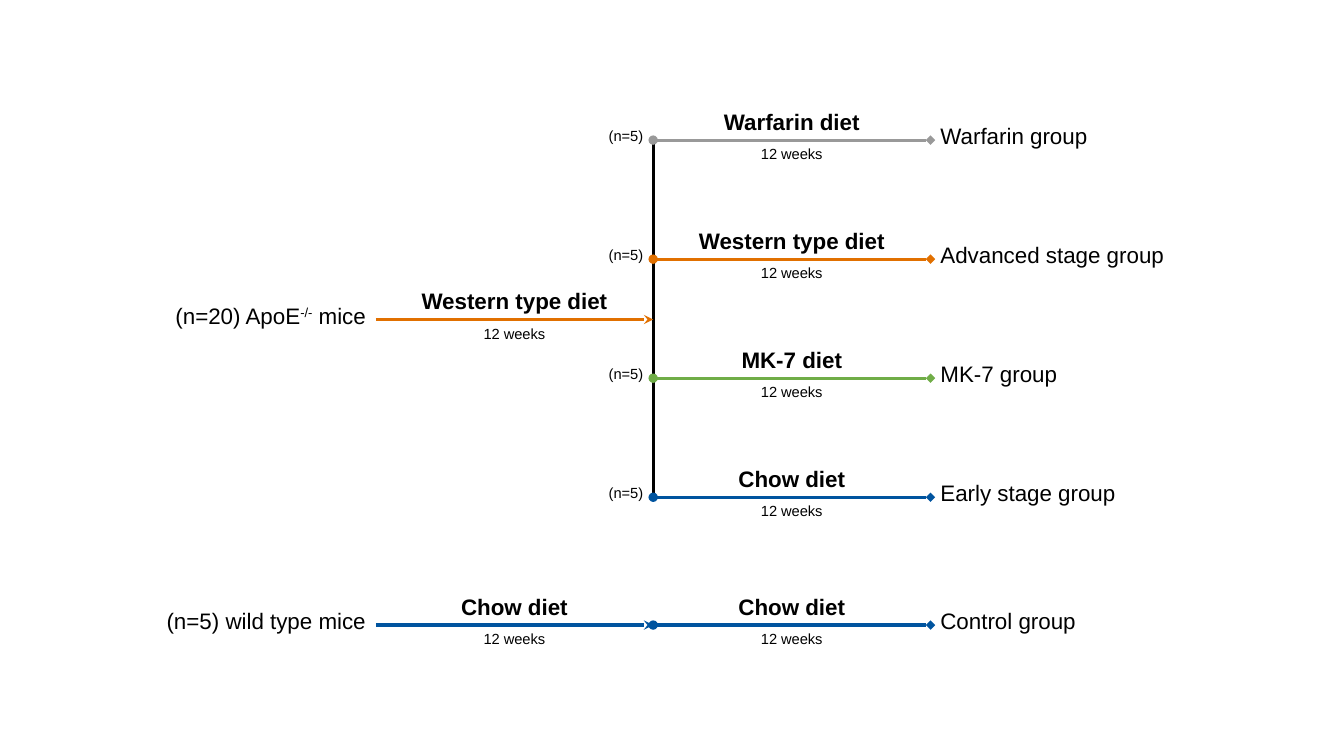
import pptx
import pptx.dml.color
import pptx.enum.shapes
import pptx.enum.text
import pptx.oxml.xmlchemy
import pptx.util
from lxml import etree
from pptx.oxml.ns import qn

Cm = pptx.util.Cm
Pt = pptx.util.Pt
ALIGN = pptx.enum.text.PP_ALIGN
ANCHOR = pptx.enum.text.MSO_ANCHOR

THEME = {
    "font": "Arial",
    "label_size": 16,
    "note_size": 10.5,
    "line_width": 2.25,
    "black": "000000",
    "grey": "999999",
    "orange": "E17000",
    "green": "70AD47",
    "blue": "00549F",
}

DURATION = "12 weeks"
SUBGROUP_SIZE = "(n=5)"
# diet, colour, resulting group
BRANCHES = [
    ("Warfarin diet", "grey", "Warfarin group"),
    ("Western type diet", "orange", "Advanced stage group"),
    ("MK-7 diet", "green", "MK-7 group"),
    ("Chow diet", "blue", "Early stage group"),
]
CONTROL = ("Chow diet", "blue", "Control group")
# mice as (text, superscript) pairs, first diet, colour, height on the slide
COHORTS = [
    ([("(n=20) ApoE", False), ("-/-", True), (" mice", False)],
     "Western type diet", "orange", 8.05),
    ([("(n=5) wild type mice", False)], "Chow diet", "blue", 15.75),
]

# Lengths in centimetres
START_X = 9.47
PERIOD = 6.99
SPLIT_X = START_X + PERIOD
END_X = SPLIT_X + PERIOD
BRANCH_TOP, BRANCH_STEP = 3.53, 3.0
CONTROL_Y = COHORTS[1][3]
LABEL_HEIGHT, NOTE_HEIGHT = 0.94, 0.74
LABEL_RISE, SIZE_RISE = 0.58, 0.47
MICE_WIDTH, GROUP_WIDTH, SIZE_WIDTH = 5.69, 6.32, 3.49

deck = pptx.Presentation()
deck.slide_width, deck.slide_height = Cm(33.87), Cm(19.05)
page = deck.slides.add_slide(deck.slide_layouts[6])


def add_text(text, left, top, width, height, size="label_size", bold=False,
             align=ALIGN.LEFT, anchor=ANCHOR.TOP):
    """Add a text box; text is a string or a list of (text, superscript) pairs."""
    box = page.shapes.add_textbox(Cm(left), Cm(top), Cm(width), Cm(height))
    frame = box.text_frame
    frame.word_wrap = True
    frame.vertical_anchor = anchor
    frame.auto_size = pptx.enum.text.MSO_AUTO_SIZE.SHAPE_TO_FIT_TEXT
    para = frame.paragraphs[0]
    para.alignment = align
    for part, superscript in [(text, False)] if isinstance(text, str) else text:
        span = para.add_run()
        span.text = part
        span.font.name = THEME["font"]
        span.font.size = Pt(THEME[size])
        span.font.bold = bold
        span.font.color.rgb = pptx.dml.color.RGBColor.from_string(THEME["black"])
        if superscript:
            span._r.get_or_add_rPr().set("baseline", "30000")


def add_line(start, end, color, head=None, tail=None):
    line = page.shapes.add_connector(
        pptx.enum.shapes.MSO_CONNECTOR.STRAIGHT,
        Cm(start[0]), Cm(start[1]), Cm(end[0]), Cm(end[1]))
    line.line.width = Pt(THEME["line_width"])
    line.line.color.rgb = pptx.dml.color.RGBColor.from_string(THEME[color])
    for tag, marker in (("a:headEnd", head), ("a:tailEnd", tail)):
        if marker:
            etree.SubElement(line.get_or_add_ln(), qn(tag), type=marker)
    etree.SubElement(line._element.spPr, qn("a:effectLst"))


def add_period(diet, left, y, color, **markers):
    """Draw one feeding period: its line, the diet above and the duration below."""
    add_line((left, y), (left + PERIOD, y), color, **markers)
    add_text(diet, left, y - LABEL_HEIGHT, PERIOD, LABEL_HEIGHT,
             bold=True, align=ALIGN.CENTER)
    add_text(DURATION, left, y, PERIOD, NOTE_HEIGHT,
             size="note_size", align=ALIGN.CENTER)


def add_outcome(diet, color, group, y):
    """Draw the second feeding period and the group it leads to."""
    add_period(diet, SPLIT_X, y, color, head="oval", tail="diamond")
    add_text(group, END_X, y - LABEL_RISE, GROUP_WIDTH, LABEL_HEIGHT,
             anchor=ANCHOR.MIDDLE)


branch_bottom = BRANCH_TOP + BRANCH_STEP * (len(BRANCHES) - 1)
add_line((SPLIT_X, BRANCH_TOP), (SPLIT_X, branch_bottom), "black")

for mice, diet, color, y in COHORTS:
    add_text(mice, START_X - MICE_WIDTH, y - LABEL_RISE, MICE_WIDTH, LABEL_HEIGHT,
             align=ALIGN.RIGHT, anchor=ANCHOR.MIDDLE)
    add_period(diet, START_X, y, color, tail="stealth")

for row, branch in enumerate(BRANCHES):
    y = BRANCH_TOP + row * BRANCH_STEP
    add_outcome(*branch, y)
    add_text(SUBGROUP_SIZE, SPLIT_X - SIZE_WIDTH, y - SIZE_RISE, SIZE_WIDTH,
             NOTE_HEIGHT, size="note_size", align=ALIGN.RIGHT)

add_outcome(*CONTROL, CONTROL_Y)

deck.save("out.pptx")
